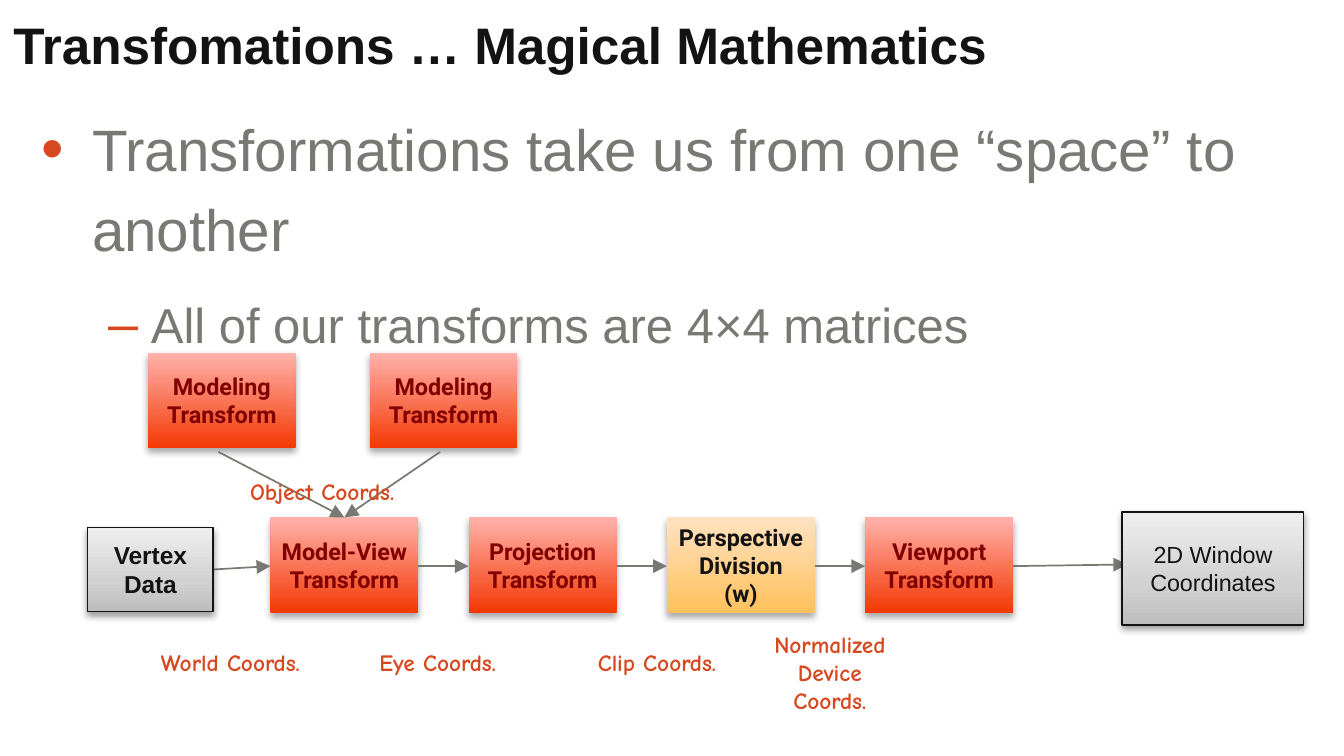
import copy
from dataclasses import dataclass

import pptx
import pptx.dml.color
import pptx.enum.shapes
import pptx.enum.text
import pptx.oxml
import pptx.oxml.ns
import pptx.util

Inches = pptx.util.Inches
Pt = pptx.util.Pt
qn = pptx.oxml.ns.qn
ALIGN = pptx.enum.text.PP_ALIGN
ANCHOR = pptx.enum.text.MSO_ANCHOR
AUTO_SIZE = pptx.enum.text.MSO_AUTO_SIZE
NS = 'xmlns:a="http://schemas.openxmlformats.org/drawingml/2006/main"'

INK, GREY, ORANGE, MAROON = "141313", "787972", "D74820", "800000"
RED_FADE = ((0, "F43804"), (100, "FFB2AB"))
AMBER_FADE = ((0, "FFC15C"), (100, "FFE2C1"))
GREY_FADE = ((0, "BDBDBD"), (35, "D1D1D1"), (100, "EEEEEE"))
STEP_W, STEP_H, STEP_TOP = 0.88, 0.57, 3.08
STEP_LEFT, STEP_PITCH = 1.61, 1.18
FLOW_Y = 3.37


@dataclass
class Stage:
    """A box of the pipeline; "\\v" breaks a line, "\\n" a paragraph."""
    text: str
    left: float
    top: float = STEP_TOP
    width: float = STEP_W
    height: float = STEP_H
    fade: tuple = RED_FADE
    color: str = MAROON
    font: str = "Roboto"
    size: float = 10
    bold: bool = True
    outline: bool = False
    wrap: bool = False


@dataclass
class Label:
    text: str
    left: float
    top: float
    width: float
    height: float = 0.27
    align: ALIGN = ALIGN.LEFT


def rgb(value: str) -> pptx.dml.color.RGBColor:
    return pptx.dml.color.RGBColor.from_string(value)


def element(xml: str):
    return pptx.oxml.parse_xml(xml)


def write(frame, text: str, *, size: float, color: str, font: str = "Arial",
          bold: bool = False, align=ALIGN.LEFT, wrap: bool = True,
          anchor=ANCHOR.TOP, auto_size=AUTO_SIZE.NONE) -> None:
    frame.word_wrap = wrap
    frame.auto_size = auto_size
    frame.vertical_anchor = anchor
    frame.text = text
    for paragraph in frame.paragraphs:
        paragraph.alignment = align
        for run in paragraph.runs:
            run.font.size, run.font.name, run.font.bold = Pt(size), font, bold
            run.font.color.rgb = rgb(color)
        # Line breaks take the size of the text around them
        for line_break in paragraph._p.findall(qn("a:br")):
            line_break.insert(0, copy.deepcopy(paragraph.runs[0]._r.rPr))


def add_bullet(paragraph, char: str, indent: float, hang: float, level: int) -> None:
    paragraph.level = level
    props = paragraph._p.get_or_add_pPr()
    props.set("marL", str(Inches(indent)))
    props.set("indent", str(-Inches(hang)))
    for xml in (f'<a:buClr {NS}><a:srgbClr val="D84820"/></a:buClr>',
                f'<a:buSzPct {NS} val="110000"/>',
                f'<a:buFont {NS} typeface="Arial"/>',
                f'<a:buChar {NS} char="{char}"/>'):
        props.append(element(xml))
    paragraph.line_spacing = 1.15
    paragraph.space_after = Pt(4.8)
    if level:
        paragraph.space_before = Pt(4.8)


def add_stage(slide, stage: Stage) -> None:
    shape = slide.shapes.add_shape(
        pptx.enum.shapes.MSO_SHAPE.RECTANGLE, Inches(stage.left), Inches(stage.top),
        Inches(stage.width), Inches(stage.height))
    shape.fill.gradient()
    shape.fill.gradient_angle = 90
    stops = shape._element.spPr.find(".//" + qn("a:gsLst"))
    for stop in list(stops):
        stops.remove(stop)
    for position, color in stage.fade:
        stops.append(element(f'<a:gs {NS} pos="{position * 1000}">'
                             f'<a:srgbClr val="{color}"/></a:gs>'))
    if stage.outline:
        shape.line.color.rgb = rgb(INK)
        shape.line.width = Pt(0.75)
    else:
        shape.line.fill.background()
    distance, alpha = (1.6, 38) if stage.outline else (1.8, 35)
    shape._element.spPr.append(element(
        f'<a:effectLst {NS}><a:outerShdw blurRad="{Pt(3.1)}" dist="{Pt(distance)}" '
        f'dir="5400000" rotWithShape="0"><a:srgbClr val="000000">'
        f'<a:alpha val="{alpha * 1000}"/></a:srgbClr></a:outerShdw></a:effectLst>'))
    write(shape.text_frame, stage.text, size=stage.size, color=stage.color,
          font=stage.font, bold=stage.bold, align=ALIGN.CENTER, wrap=stage.wrap,
          anchor=ANCHOR.MIDDLE)


def add_arrow(slide, start: tuple[float, float], end: tuple[float, float]) -> None:
    arrow = slide.shapes.add_connector(
        pptx.enum.shapes.MSO_CONNECTOR.STRAIGHT,
        *(Inches(value) for value in (*start, *end)))
    arrow.line.color.rgb = rgb(GREY)
    arrow.line.width = Pt(0.75)
    arrow.line._get_or_add_ln().append(element(f'<a:tailEnd {NS} type="triangle"/>'))
    arrow._element.spPr.append(element(f"<a:effectLst {NS}/>"))


def add_label(slide, label: Label) -> None:
    box = slide.shapes.add_textbox(Inches(label.left), Inches(label.top),
                                   Inches(label.width), Inches(label.height))
    write(box.text_frame, label.text, size=10, color=ORANGE, font="Comic Neue",
          bold=True, align=label.align, wrap=False,
          auto_size=AUTO_SIZE.SHAPE_TO_FIT_TEXT)


def main() -> None:
    deck = pptx.Presentation()
    deck.slide_width, deck.slide_height = Inches(8), Inches(4.5)
    slide = deck.slides.add_slide(deck.slide_layouts[5])

    # Title
    title = slide.shapes.title
    title.left, title.top = Inches(-0.02), Inches(0)
    title.width, title.height = Inches(7.35), Inches(0.63)
    write(title.text_frame, "Transfomations … Magical Mathematics",
          size=22, color=INK, bold=True)
    title.text_frame.margin_top = Inches(0.08)

    # Bulleted statement
    points = slide.shapes.add_textbox(Inches(0.15), Inches(0.54),
                                      Inches(7.44), Inches(3.42)).text_frame
    write(points, "Transformations take us from one “space” to another\n"
          "All of our transforms are 4×4 matrices", size=25, color=GREY)
    points.margin_top = Inches(0.07)
    claim, detail = points.paragraphs
    add_bullet(claim, "•", indent=0.3, hang=0.3, level=0)
    add_bullet(detail, "–", indent=0.65, hang=0.25, level=1)
    detail.runs[0].font.size = Pt(21)

    # Pipeline steps
    step_lefts = [STEP_LEFT + i * STEP_PITCH for i in range(4)]
    model_view, projection, division, viewport = step_lefts
    for stage in (
        Stage("Model-View\vTransform", model_view),
        Stage("Projection\vTransform", projection),
        Stage("Perspective\vDivision\n(w)", division, fade=AMBER_FADE, color=INK),
        Stage("Viewport\vTransform", viewport),
    ):
        add_stage(slide, stage)

    # Flow from the vertex data to the window
    add_arrow(slide, (1.27, 3.39), (model_view, FLOW_Y))
    for left, following in zip(step_lefts, step_lefts[1:]):
        add_arrow(slide, (left + STEP_W, FLOW_Y), (following, FLOW_Y))
    add_arrow(slide, (viewport + STEP_W, FLOW_Y), (6.71, 3.36))

    # Modeling transforms feeding the model-view step
    for left in (0.88, 2.2):
        add_stage(slide, Stage("Modeling\vTransform", left, top=2.1))
        add_arrow(slide, (left + 0.42, 2.69), (model_view + STEP_W / 2, STEP_TOP))

    # Coordinate spaces
    for label in (
        Label("Object Coords.", 1.39, 2.79, 1.24),
        Label("World Coords.", 0.86, 3.81, 1.18),
        Label("Eye Coords.", 2.16, 3.81, 1.02),
        Label("Clip Coords.", 3.46, 3.81, 1.02),
        Label("Normalized\vDevice\nCoords.", 4.46, 3.7, 0.96, 0.61, ALIGN.CENTER),
    ):
        add_label(slide, label)

    # Input and output
    add_stage(slide, Stage("Vertex Data", 0.52, 3.14, 0.75, 0.5, GREY_FADE, INK,
                           "Arial", 10.5, outline=True, wrap=True))
    add_stage(slide, Stage("2D Window\vCoordinates", 6.68, 3.05, 1.08, 0.67, GREY_FADE,
                           INK, "Arial", bold=False, outline=True, wrap=True))

    deck.save("out.pptx")


if __name__ == "__main__":
    main()
